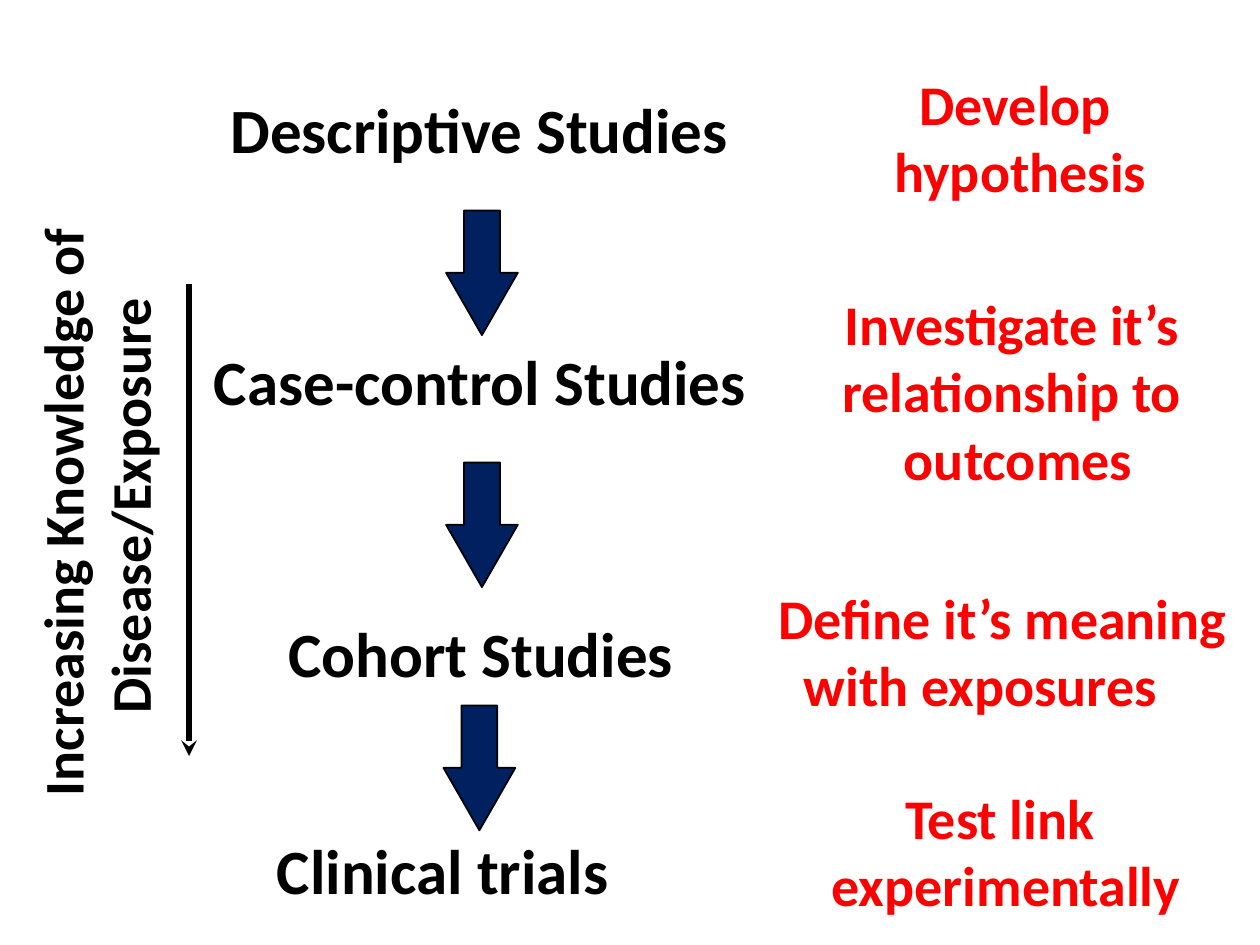
from lxml.etree import SubElement
from pptx import Presentation
from pptx.dml.color import RGBColor
from pptx.enum.shapes import MSO_CONNECTOR as Connector, MSO_SHAPE as Shape
from pptx.enum.text import MSO_AUTO_SIZE as AutoSize, PP_ALIGN as Align
from pptx.oxml.ns import qn
from pptx.util import Inches, Pt

BLACK, RED, NAVY = "000000", "FF0000", "002060"


def color(value):
    return RGBColor.from_string(value)


def apply(target, values):
    for name, value in values.items():
        setattr(target, name, value)


class StudySlide:
    font = {"name": "Calibri", "bold": True}
    frame = {"word_wrap": False, "auto_size": AutoSize.SHAPE_TO_FIT_TEXT}
    arrow_size = (0.57, 0.99)

    def __init__(self, deck):
        self.page = deck.slides.add_slide(deck.slide_layouts[6])

    def text(self, place, lines, size, ink, align=Align.LEFT, rotation=0):
        box = self.page.shapes.add_textbox(*map(Inches, place))
        box.rotation = rotation
        apply(box.text_frame, self.frame)
        for index, (words, indent) in enumerate(lines):
            paras = box.text_frame.paragraphs
            para = box.text_frame.add_paragraph() if index else paras[0]
            para.alignment = align
            if indent:
                para._p.get_or_add_pPr().set("marL", str(Inches(indent)))
            span = para.add_run()
            span.text = words
            apply(span.font, {**self.font, "size": Pt(size)})
            span.font.color.rgb = color(ink)

    def block_arrow(self, left, top):
        arrow = self.page.shapes.add_shape(
            Shape.DOWN_ARROW, *map(Inches, (left, top, *self.arrow_size)))
        arrow.shadow.inherit = False
        arrow.adjustments[0] = 0.5
        arrow.adjustments[1] = 0.87
        arrow.fill.solid()
        arrow.fill.fore_color.rgb = color(NAVY)
        arrow.line.color.rgb = color(BLACK)
        arrow.line.width = Pt(1)

    def line_arrow(self, start, end):
        line = self.page.shapes.add_connector(
            Connector.STRAIGHT, *map(Inches, (*start, *end)))
        line.line.color.rgb = color(BLACK)
        line.line.width = Pt(3)
        SubElement(line.line._get_or_add_ln(), qn("a:tailEnd"), type="stealth")
        SubElement(line._element.spPr, qn("a:effectLst"))


def main():
    deck = Presentation()
    deck.slide_width, deck.slide_height = Inches(10), Inches(7.5)
    slide = StudySlide(deck)

    studies = [
        ("Descriptive Studies", (1.73, 0.67, 4.3, 0.7)),
        ("Case-control Studies", (1.6, 2.67, 4.6, 0.7)),
        ("Cohort Studies", (2.19, 4.83, 3.41, 0.7)),
        ("Clinical trials", (2.1, 6.55, 3.1, 0.7)),
    ]
    for name, place in studies:
        slide.text(place, [(name, 0)], 36, BLACK)

    for left, top in [(3.54, 1.67), (3.54, 3.67), (3.52, 5.6)]:
        slide.block_arrow(left, top)

    purposes = [
        ((7, 0.5, 2.22, 1.18), Align.LEFT,
         [("Develop", 0.2), ("hypothesis", 0)]),
        ((6.57, 2.25, 2.92, 1.71), Align.CENTER,
         [("Investigate it’s", 0), ("relationship to", 0), ("outcomes", 0.1)]),
        ((6.08, 4.58, 3.79, 1.18), Align.LEFT,
         [("Define it’s meaning", 0), ("with exposures", 0.2)]),
        ((6.49, 6.17, 2.99, 1.18), Align.CENTER,
         [("Test link ", 0), ("experimentally", 0)]),
    ]
    for place, align, lines in purposes:
        slide.text(place, lines, 32, RED, align)

    slide.text((-1.76, 3.43, 5.03, 1.17),
               [("Increasing Knowledge of ", 0), ("Disease/Exposure", 0)],
               32, BLACK, Align.CENTER, 270)
    slide.line_arrow((1.5, 2.25), (1.5, 6))
    deck.save("out.pptx")


if __name__ == "__main__":
    main()
